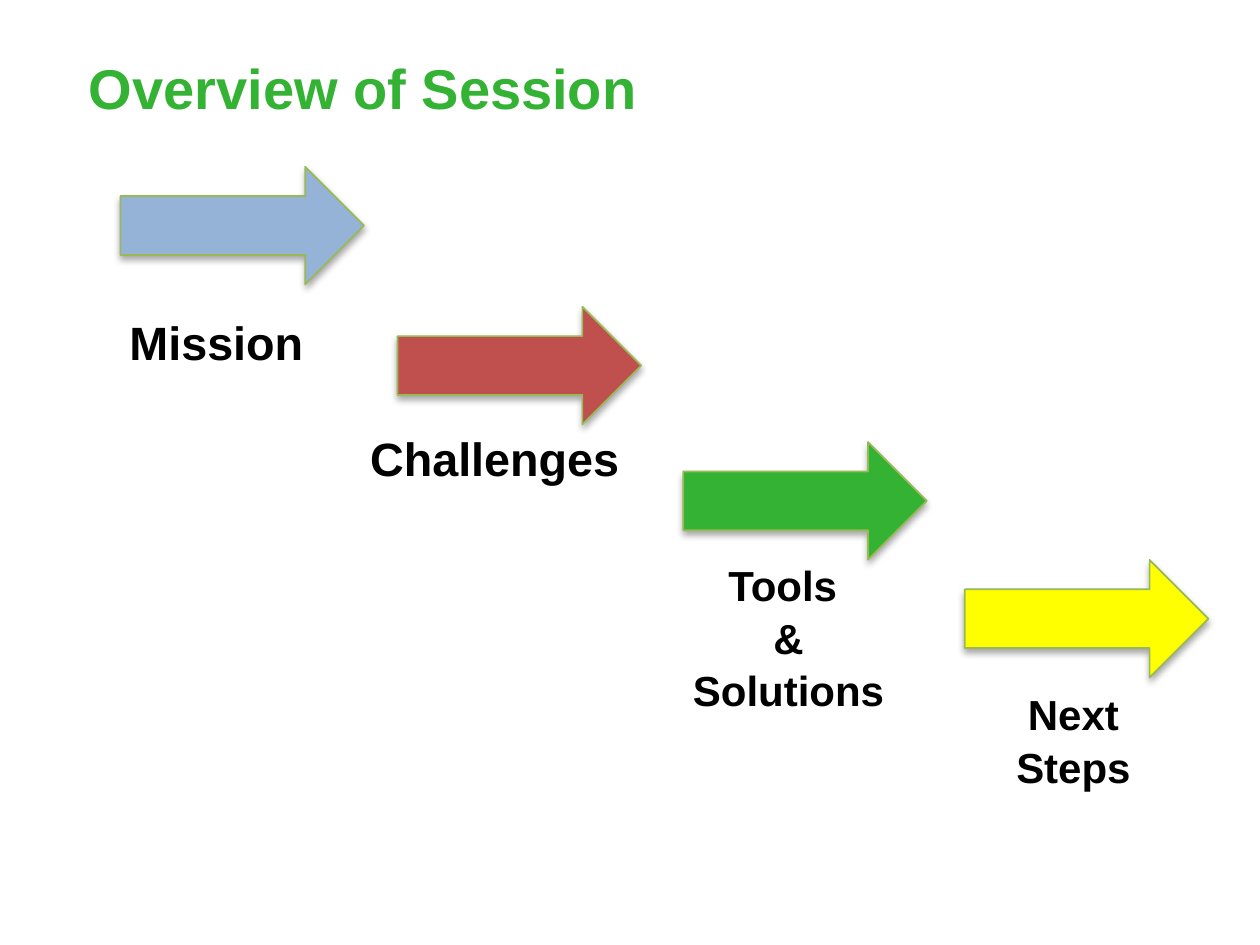
import pptx
import pptx.dml.color
import pptx.enum.shapes
import pptx.enum.text
import pptx.oxml
import pptx.oxml.ns
import pptx.util

Pt = pptx.util.Pt
RGBColor = pptx.dml.color.RGBColor
ALIGN = pptx.enum.text.PP_ALIGN
ANCHOR = pptx.enum.text.MSO_ANCHOR

GREEN = RGBColor(0x34, 0xB2, 0x33)
BLUE = RGBColor(0x95, 0xB3, 0xD7)
RED = RGBColor(0xC0, 0x50, 0x4D)
YELLOW = RGBColor(0xFF, 0xFF, 0x00)
OUTLINE = RGBColor(0x98, 0xB9, 0x55)
BLACK = RGBColor(0x00, 0x00, 0x00)

ARROW_SIZE = (104.4, 50.4)
LABEL_INDENT = 36
SOFT_SHADOW = (
    f'<a:effectLst {pptx.oxml.ns.nsdecls("a")}>'
    f'<a:outerShdw blurRad="{Pt(3.1)}" dist="{Pt(1.8)}" dir="5400000" rotWithShape="0">'
    '<a:srgbClr val="000000"><a:alpha val="35000"/></a:srgbClr>'
    '</a:outerShdw></a:effectLst>'
)


class SessionSlide:
    font_name = "Arial"
    line_spacing = 1.05

    def __init__(self, deck):
        self.shapes = deck.slides.add_slide(deck.slide_layouts[6]).shapes

    def text(self, box, lines, size, color=BLACK, align=ALIGN.CENTER,
             anchor=ANCHOR.TOP, indent=0):
        frame = self.shapes.add_textbox(*map(Pt, box)).text_frame
        frame.word_wrap = True
        frame.vertical_anchor = anchor
        frame.text = "\n".join(lines)
        font_format = {"name": self.font_name, "size": Pt(size), "bold": True}
        for paragraph in frame.paragraphs:
            paragraph.alignment = align
            paragraph.line_spacing = self.line_spacing
            if indent:
                properties = paragraph._p.get_or_add_pPr()
                properties.set("marL", str(Pt(indent)))
                properties.set("indent", "0")
            font = paragraph.runs[0].font
            for key, value in font_format.items():
                setattr(font, key, value)
            font.color.rgb = color

    def arrow(self, left, top, color):
        arrow = self.shapes.add_shape(
            pptx.enum.shapes.MSO_SHAPE.RIGHT_ARROW,
            *map(Pt, (left, top, *ARROW_SIZE)))
        arrow.fill.solid()
        arrow.fill.fore_color.rgb = color
        arrow.line.color.rgb = OUTLINE
        arrow.line.width = Pt(0.75)
        arrow._element.spPr.append(pptx.oxml.parse_xml(SOFT_SHADOW))


def main():
    deck = pptx.Presentation()
    deck.slide_width, deck.slide_height = Pt(540), Pt(405)
    overview = SessionSlide(deck)

    overview.text((31, 12, 486, 49), ["Overview of Session"], 24, GREEN,
                  ALIGN.LEFT, ANCHOR.MIDDLE)

    for left, top, color in [(51.6, 71.5, BLUE), (170.4, 131.5, RED),
                             (292.8, 189.5, GREEN), (413.5, 240, YELLOW)]:
        overview.arrow(left, top, color)

    steps = [
        ((46, 129.6, 93.6, 31.7), ["Mission"], 20, ANCHOR.TOP, 0),
        ((103.7, 179.3, 180.7, 31.7), ["Challenges"], 20, ANCHOR.TOP, LABEL_INDENT),
        ((252, 236.2, 136, 72.7), ["Tools ", "&", "Solutions"], 18,
         ANCHOR.MIDDLE, LABEL_INDENT),
        ((378.7, 290.5, 126.7, 51), ["Next Steps"], 18, ANCHOR.TOP, LABEL_INDENT),
    ]
    for box, lines, size, anchor, indent in steps:
        overview.text(box, lines, size, anchor=anchor, indent=indent)

    deck.save("out.pptx")


if __name__ == "__main__":
    main()
